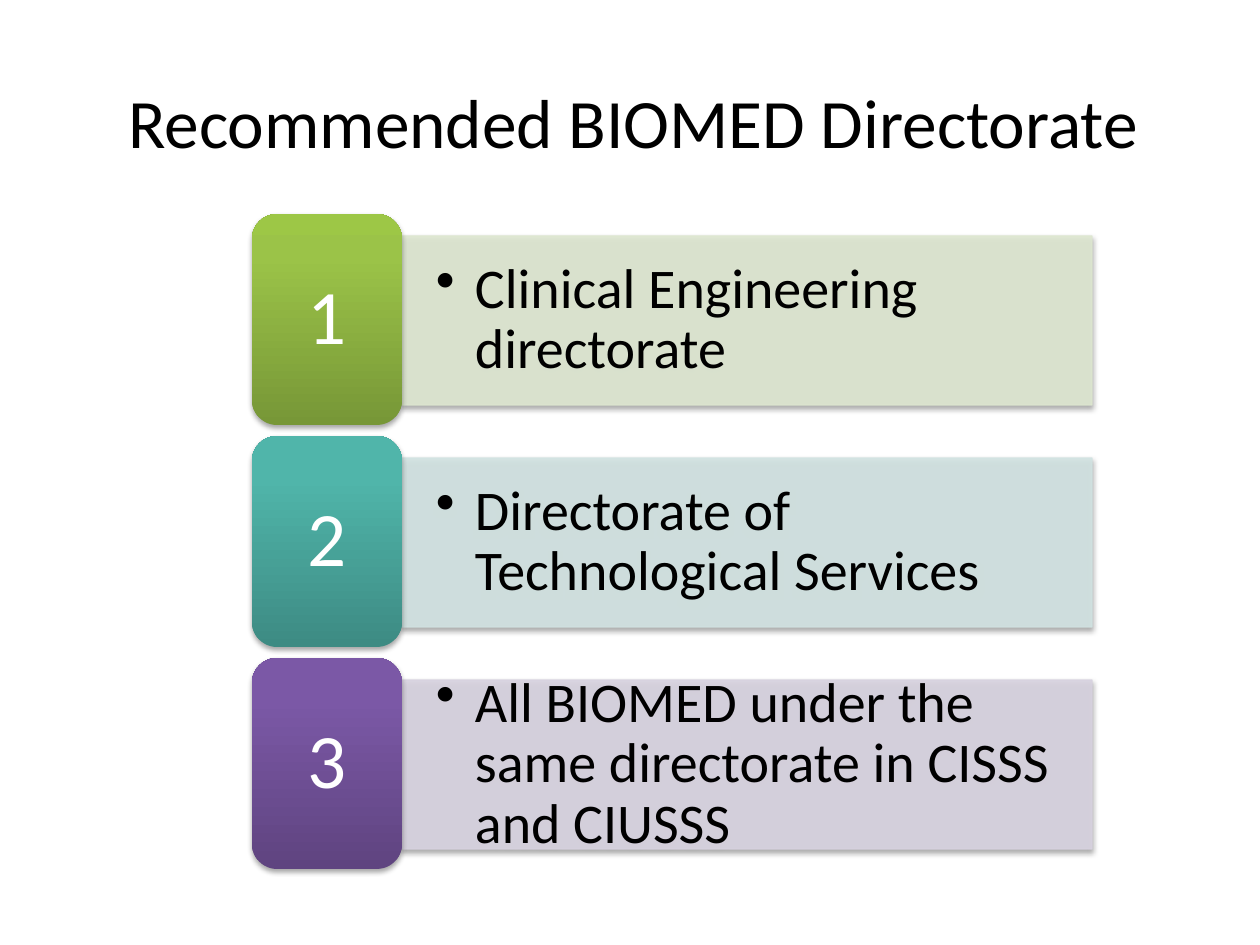
import copy

import lxml.etree
import pptx
import pptx.dml.color
import pptx.enum.shapes
import pptx.enum.text
import pptx.oxml
import pptx.oxml.ns
import pptx.util

EMU_PER_INCH = 914400
PX_PER_INCH = 126
ROW_STEP = 222
SHAPES = pptx.enum.shapes.MSO_SHAPE
ALIGN = pptx.enum.text.PP_ALIGN
MIDDLE = pptx.enum.text.MSO_ANCHOR.MIDDLE

DIRECTORATES = [
    ("Clinical Engineering directorate", "DEE7D1", ("779737", "9BC348", "9DC746")),
    ("Directorate of Technological Services", "D2E3E2", ("3D8B83", "50B5AA", "4EB8AC")),
    ("All BIOMED under the same directorate in CISSS and CIUSSS", "D8D3E0",
     ("5F4480", "7B58A6", "7C57A8")),
]
SHADOW = (
    '<a:effectLst %s><a:outerShdw blurRad="40000" dist="23000" dir="5400000" '
    'rotWithShape="0"><a:srgbClr val="000000"><a:alpha val="35000"/></a:srgbClr>'
    '</a:outerShdw></a:effectLst>' % pptx.oxml.ns.nsdecls("a")
)


def px(length):
    return round(length * EMU_PER_INCH / PX_PER_INCH)


def color(value):
    return pptx.dml.color.RGBColor.from_string(value)


def apply_format(target, values):
    for name, value in values.items():
        setattr(target, name, value)


def write_text(shape, text, size, ink, frame_format, paragraph_format, bulleted=False):
    frame = shape.text_frame
    apply_format(frame, {"word_wrap": True, "vertical_anchor": MIDDLE, **frame_format})
    paragraph = frame.paragraphs[0]
    paragraph.text = text
    if bulleted:
        add_bullet(paragraph)
    apply_format(paragraph, paragraph_format)
    font = paragraph.runs[0].font
    apply_format(font, {"name": "Calibri", "size": pptx.util.Pt(size)})
    font.color.rgb = color(ink)


def add_bullet(paragraph):
    properties = paragraph._p.get_or_add_pPr()
    apply_indent = {"marL": px(39), "indent": -px(39)}
    for name, value in apply_indent.items():
        properties.set(name, str(value))
    bullet = lxml.etree.SubElement(properties, pptx.oxml.ns.qn("a:buChar"))
    bullet.set("char", "•")


def insets(side, end):
    return {
        "margin_left": px(side), "margin_right": px(side),
        "margin_top": px(end), "margin_bottom": px(end),
    }


def add_shadowed_shape(slide, kind, left, top, width, height):
    shape = slide.shapes.add_shape(kind, px(left), px(top), px(width), px(height))
    shape.shadow.inherit = False
    properties = shape._element.spPr
    flat_effects = properties.find(pptx.oxml.ns.qn("a:effectLst"))
    properties.replace(flat_effects, pptx.oxml.parse_xml(SHADOW))
    return shape


def add_bar(slide, top, text, tint):
    bar = add_shadowed_shape(slide, SHAPES.RECTANGLE, 402, top, 690, 169)
    bar.fill.solid()
    bar.fill.fore_color.rgb = color(tint)
    bar.line.color.rgb = color(tint)
    bar.line.width = pptx.util.Pt(0.75)
    for tint_element in bar._element.spPr.xpath("./a:solidFill/a:srgbClr | ./a:ln//a:srgbClr"):
        alpha = lxml.etree.SubElement(tint_element, pptx.oxml.ns.qn("a:alpha"))
        alpha.set("val", "90000")
    write_text(bar, text, 32, "000000", insets(34, 17),
               {"level": 1, "alignment": ALIGN.LEFT, "line_spacing": 0.9}, bulleted=True)


def add_number_tile(slide, top, number, shades):
    tile = add_shadowed_shape(slide, SHAPES.ROUNDED_RECTANGLE, 252, top, 150, 211)
    tile.fill.gradient()
    tile.fill.gradient_angle = 90
    stop_list = tile._element.spPr.find(".//" + pptx.oxml.ns.qn("a:gsLst"))
    stop_list.append(copy.deepcopy(stop_list[-1]))
    for stop, position, shade in zip(tile.fill.gradient_stops, (0, 0.8, 1), shades):
        stop.position = position
        stop.color.rgb = color(shade)
    tile.line.fill.background()
    write_text(tile, str(number), 44, "FFFFFF", insets(30, 18),
               {"alignment": ALIGN.CENTER, "line_spacing": 0.9})


def add_title(slide, text):
    title = slide.shapes.add_textbox(px(116), px(42), px(1112), px(157))
    write_text(title, text, 39.6, "000000", {}, {"alignment": ALIGN.LEFT})


def main():
    deck = pptx.Presentation()
    apply_format(deck, {"slide_width": px(1260), "slide_height": px(945)})
    slide = deck.slides.add_slide(deck.slide_layouts[6])
    add_title(slide, "Recommended BIOMED Directorate")
    for row, (text, tint, shades) in enumerate(DIRECTORATES):
        top = 214 + row * ROW_STEP
        add_bar(slide, top + 22, text, tint)
        add_number_tile(slide, top, row + 1, shades)
    deck.save("out.pptx")


if __name__ == "__main__":
    main()
